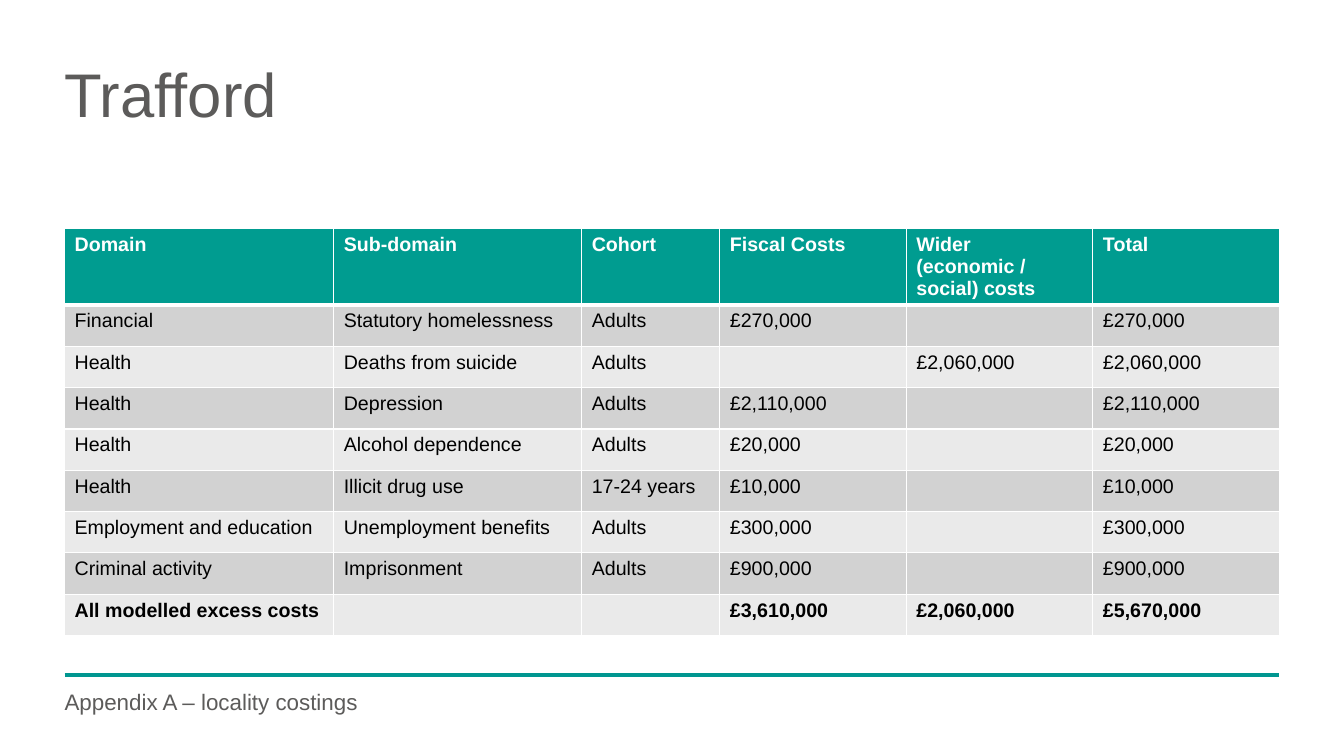
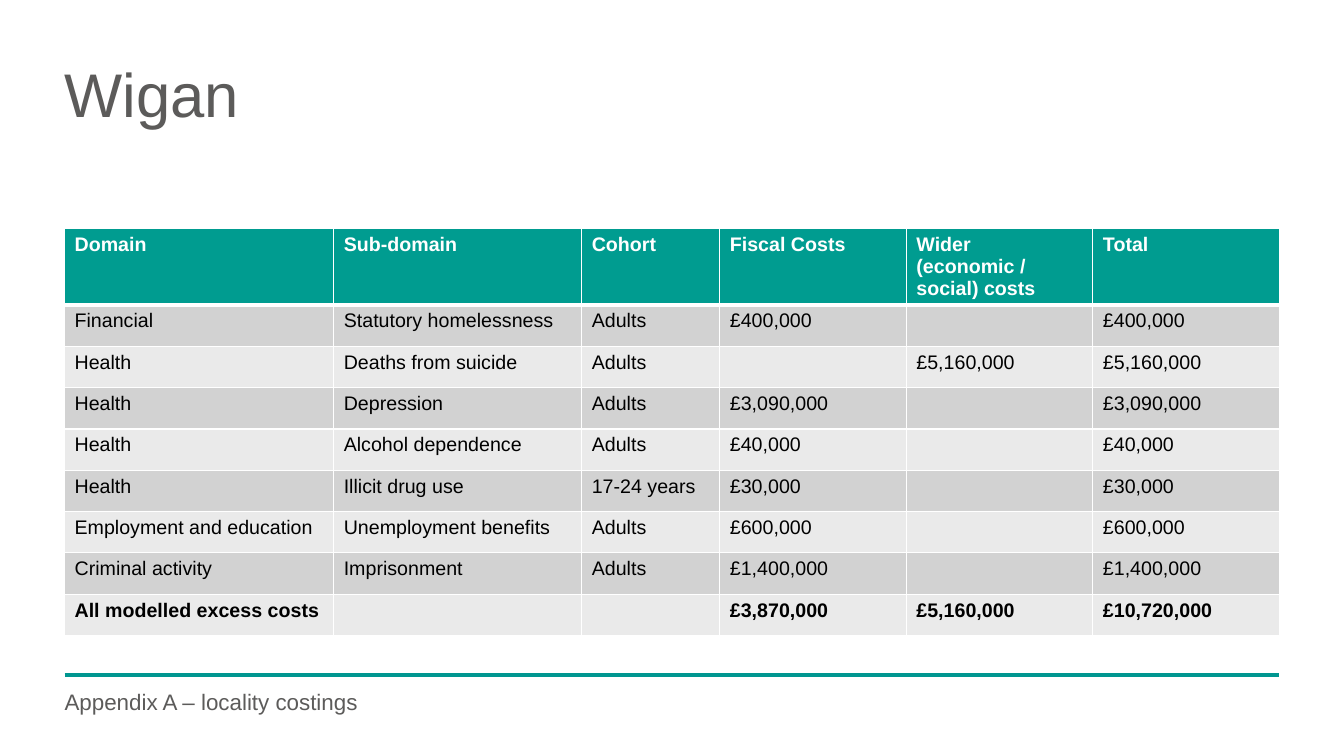
import dataclasses

import lxml.etree
import pptx
import pptx.dml.color
import pptx.enum.shapes
import pptx.enum.text
import pptx.oxml.ns
import pptx.presentation
import pptx.shapes.base
import pptx.slide
import pptx.table
import pptx.text.text
import pptx.util

Inches = pptx.util.Inches
Pt = pptx.util.Pt

COLOURS = {
    "rule": "009690",
    "header": "009C90",
    "dark band": "D2D2D2",
    "light band": "EAEAEA",
    "heading": "5C5B5A",
    "body": "000000",
    "white": "FFFFFF",
}
FONT = "Arial"
LEFT = 0.64
WIDTH = 12.05
RULE_TOP = 6.7
TABLE_TOP = 2.27
ROW_HEIGHT = 0.41
COLUMN_WIDTHS = (2.67, 2.46, 1.37, 1.85, 1.85, 1.85)
FOOTER = "Appendix A – locality costings"
HEADINGS = ("Domain", "Sub-domain", "Cohort", "Fiscal Costs",
            "Wider (economic / social) costs", "Total")


@dataclasses.dataclass(frozen=True)
class Measure:
    domain: str
    sub_domain: str
    cohort: str = "Adults"
    is_wider: bool = False


@dataclasses.dataclass(frozen=True)
class Locality:
    """Costs follow the order of MEASURES; totals are fiscal, wider, all."""
    name: str
    costs: tuple[int, ...]
    totals: tuple[int, int, int]


MEASURES = (
    Measure("Financial", "Statutory homelessness"),
    Measure("Health", "Deaths from suicide", is_wider=True),
    Measure("Health", "Depression"),
    Measure("Health", "Alcohol dependence"),
    Measure("Health", "Illicit drug use", "17-24 years"),
    Measure("Employment and education", "Unemployment benefits"),
    Measure("Criminal activity", "Imprisonment"),
)
LOCALITIES = (
    Locality("Trafford",
             (270_000, 2_060_000, 2_110_000, 20_000, 10_000, 300_000, 900_000),
             (3_610_000, 2_060_000, 5_670_000)),
    Locality("Wigan",
             (400_000, 5_160_000, 3_090_000, 40_000, 30_000, 600_000, 1_400_000),
             (3_870_000, 5_160_000, 10_720_000)),
)


def rgb(colour: str) -> pptx.dml.color.RGBColor:
    return pptx.dml.color.RGBColor.from_string(COLOURS[colour])


def pounds(amount: int) -> str:
    return f"£{amount:,}"


def add_span(para: pptx.text.text._Paragraph, text: str, size: float,
             colour: str, bold: bool = False) -> None:
    span = para.add_run()
    span.text = text
    span.font.name = FONT
    span.font.size = Pt(size)
    span.font.bold = bold
    span.font.color.rgb = rgb(colour)


def write_heading(box: pptx.shapes.base.BaseShape, text: str, top: float,
                  height: float, size: float) -> None:
    """Place a full-width box and fill it with one line of heading text."""
    box.left, box.top = Inches(LEFT), Inches(top)
    box.width, box.height = Inches(WIDTH), Inches(height)
    frame = box.text_frame
    frame.word_wrap = True
    frame.auto_size = pptx.enum.text.MSO_AUTO_SIZE.NONE
    frame.vertical_anchor = pptx.enum.text.MSO_ANCHOR.TOP
    frame.margin_left = frame.margin_right = 0
    frame.margin_top = frame.margin_bottom = 0
    para = frame.paragraphs[0]
    para.alignment = pptx.enum.text.PP_ALIGN.LEFT
    para.line_spacing = 0.9
    add_span(para, text, size, "heading")


def add_rule(page: pptx.slide.Slide) -> None:
    rule = page.shapes.add_connector(
        pptx.enum.shapes.MSO_CONNECTOR.STRAIGHT,
        Inches(LEFT), Inches(RULE_TOP), Inches(LEFT + WIDTH), Inches(RULE_TOP))
    rule.line.color.rgb = rgb("rule")
    rule.line.width = Pt(3)
    lxml.etree.SubElement(rule._element.spPr, pptx.oxml.ns.qn("a:effectLst"))


def set_borders(cell: pptx.table._Cell, top: float, bottom: float) -> None:
    """Draw white borders, with the top and bottom widths in points."""
    qn = pptx.oxml.ns.qn
    properties = cell._tc.get_or_add_tcPr()
    for side, width in (("L", 1), ("R", 1), ("T", top), ("B", bottom)):
        border = lxml.etree.SubElement(properties, qn(f"a:ln{side}"), w=str(Pt(width)))
        fill = lxml.etree.SubElement(border, qn("a:solidFill"))
        lxml.etree.SubElement(fill, qn("a:srgbClr"), val=COLOURS["white"])


def cost_rows(locality: Locality) -> list[tuple[str, ...]]:
    rows = [HEADINGS]
    for measure, cost in zip(MEASURES, locality.costs):
        amount = pounds(cost)
        fiscal, wider = ("", amount) if measure.is_wider else (amount, "")
        rows.append((measure.domain, measure.sub_domain, measure.cohort,
                     fiscal, wider, amount))
    rows.append(("All modelled excess costs", "", "", *map(pounds, locality.totals)))
    return rows


def add_cost_table(page: pptx.slide.Slide, locality: Locality) -> None:
    rows = cost_rows(locality)
    table = page.shapes.add_table(
        len(rows), len(HEADINGS), Inches(LEFT), Inches(TABLE_TOP),
        Inches(WIDTH), Inches(ROW_HEIGHT * len(rows))).table
    for column, width in zip(table.columns, COLUMN_WIDTHS):
        column.width = Inches(width)
    for row_index, texts in enumerate(rows):
        table.rows[row_index].height = Inches(ROW_HEIGHT)
        is_header = row_index == 0
        is_bold = row_index in (0, len(rows) - 1)
        band = "dark band" if row_index % 2 else "light band"
        for column_index, text in enumerate(texts):
            cell = table.cell(row_index, column_index)
            set_borders(cell, top=3 if row_index == 1 else 1,
                        bottom=3 if is_header else 1)
            cell.fill.solid()
            cell.fill.fore_color.rgb = rgb("header" if is_header else band)
            if text:
                add_span(cell.text_frame.paragraphs[0], text, 14,
                         "white" if is_header else "body", is_bold)


def add_locality_page(deck: pptx.presentation.Presentation, locality: Locality) -> None:
    page = deck.slides.add_slide(deck.slide_layouts.get_by_name("Title Only"))
    add_rule(page)
    write_heading(page.shapes.title, locality.name, top=0.64, height=1.01, size=44)
    footer = page.shapes.add_textbox(0, 0, 0, 0)
    write_heading(footer, FOOTER, top=6.86, height=0.42, size=16)
    add_cost_table(page, locality)


def main() -> None:
    deck = pptx.Presentation()
    deck.slide_width, deck.slide_height = Inches(13.33), Inches(7.5)
    for locality in LOCALITIES:
        add_locality_page(deck, locality)
    deck.save("out.pptx")


if __name__ == "__main__":
    main()
